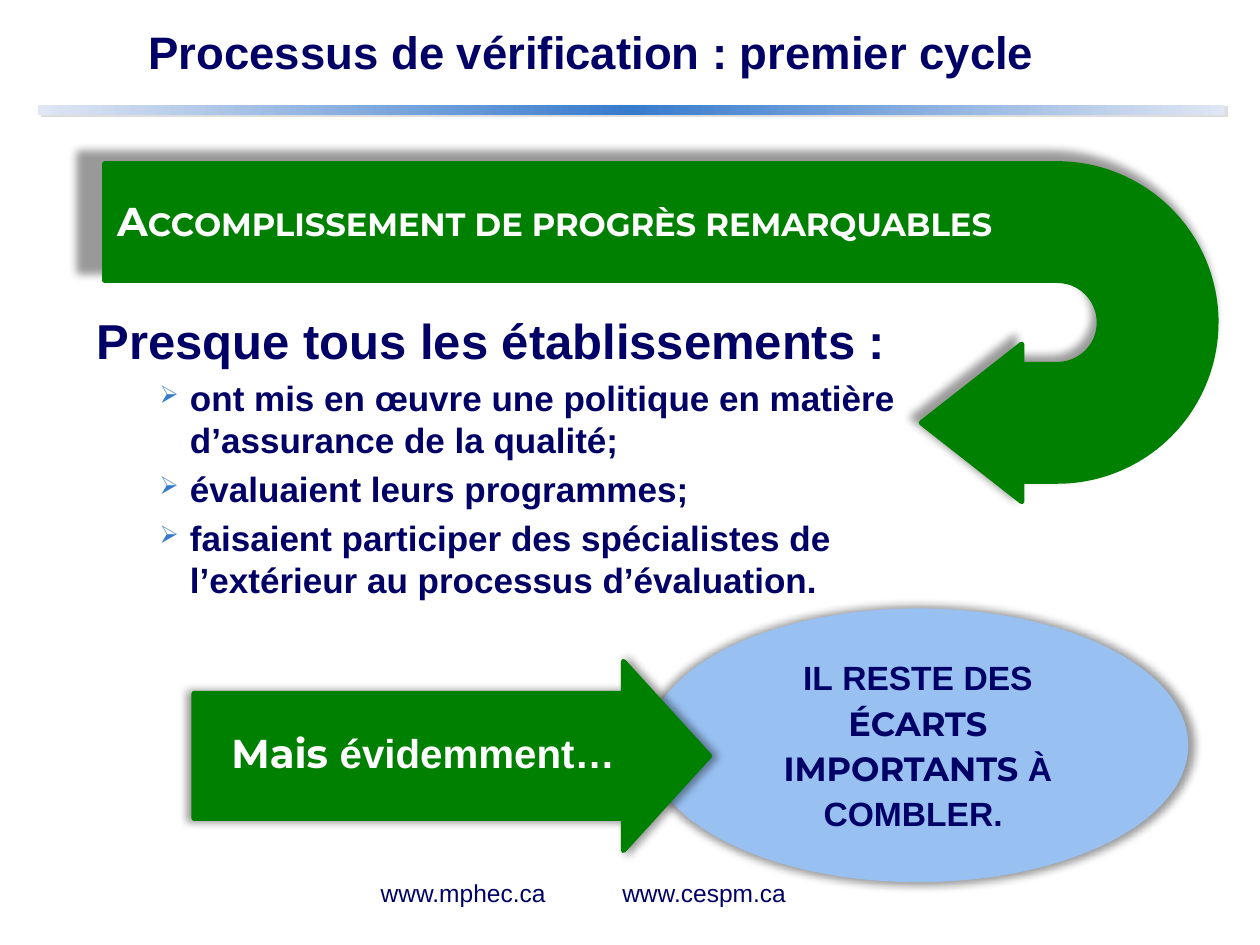
from lxml.etree import SubElement as Sub
from pptx import Presentation as Deck
from pptx.dml.color import RGBColor as Rgb
from pptx.enum.shapes import MSO_SHAPE as Kind
from pptx.enum.text import MSO_ANCHOR as Anchor, PP_ALIGN as Align
from pptx.oxml.ns import qn
from pptx.util import Pt

HUES = {
    "navy": "000066", "white": "FFFFFF", "green": "008000", "sky": "98C1F2",
    "blue": "377BCD", "pale": "E0E6F3", "gray": "DDDDDD", "black": "000000",
}


def hue(name):
    return Rgb.from_string(HUES[name])


def write(par, text, size=24, face="Arial", color="navy", bold=True, small=False):
    run = par.add_run()
    run.text = text
    font = run.font
    font.size, font.name, font.bold = Pt(size), face, bold
    font.color.rgb = hue(color)
    if small:
        run._r.get_or_add_rPr().set("cap", "small")


class Page:
    def __init__(self, slide):
        self.slide = slide
        self.edge = 3
        self.lead = 0.9

    def shape(self, kind, box, color, adjust=(), turn=0):
        item = self.slide.shapes.add_shape(kind, *map(Pt, box))
        for index, value in enumerate(adjust):
            item.adjustments[index] = value
        item.rotation = turn
        item.fill.solid()
        item.fill.fore_color.rgb = hue(color)
        item.line.color.rgb = hue(color)
        item.line.width = Pt(self.edge)
        Sub(item.line._get_or_add_ln(), qn("a:round"))
        self.shade(item, "black", 40, blurRad=Pt(5), sx=102000, sy=102000, algn="ctr")
        frame = item.text_frame
        frame.word_wrap = True
        frame.vertical_anchor = Anchor.MIDDLE
        return frame

    def shade(self, item, color, alpha, **spec):
        item.shadow.inherit = False
        effects = item._element.spPr.find(qn("a:effectLst"))
        spec = {key: str(value) for key, value in spec.items()}
        outer = Sub(effects, qn("a:outerShdw"), rotWithShape="0", **spec)
        tint = Sub(outer, qn("a:srgbClr"), val=HUES[color])
        Sub(tint, qn("a:alpha"), val=str(alpha * 1000))

    def rule(self, box):
        item = self.slide.shapes.add_shape(Kind.RECTANGLE, *map(Pt, box))
        item.line.fill.background()
        item.fill.gradient()
        item.fill.gradient_angle = 0
        stops = item._element.spPr.find(qn("a:gradFill")).find(qn("a:gsLst"))
        stops.clear()
        for place, name in ((0, "pale"), (50, "blue"), (100, "pale")):
            stop = Sub(stops, qn("a:gs"), pos=str(place * 1000))
            Sub(stop, qn("a:srgbClr"), val=HUES[name])
        self.shade(item, "gray", 100, dist=Pt(2.2), dir=27 * 60000)

    def text(self, box, text, align=Align.LEFT, anchor=Anchor.TOP, lead=None, **look):
        frame = self.slide.shapes.add_textbox(*map(Pt, box)).text_frame
        frame.word_wrap = True
        frame.vertical_anchor = anchor
        par = frame.paragraphs[0]
        par.alignment = align
        par.line_spacing = lead
        write(par, text, **look)
        return frame

    def bullet(self, frame, text, size):
        par = frame.add_paragraph()
        props = par._p.get_or_add_pPr()
        props.set("marL", str(Pt(53.3)))
        props.set("indent", str(Pt(-17.3)))
        Sub(Sub(props, qn("a:buClr")), qn("a:srgbClr"), val=HUES["blue"])
        Sub(props, qn("a:buSzPct"), val="70000")
        Sub(props, qn("a:buChar"), char="➢")
        par.space_before = Pt(size * 0.2)
        write(par, text, size=size)

    def label(self, frame, lines, **look):
        for index, line in enumerate(lines):
            par = frame.add_paragraph() if index else frame.paragraphs[0]
            par.alignment = Align.CENTER
            par.line_spacing = self.lead
            for text, face in line:
                write(par, text, face=face, **look)


def main():
    deck = Deck()
    deck.slide_width, deck.slide_height = Pt(720), Pt(540)
    page = Page(deck.slides.add_slide(deck.slide_layouts[6]))

    page.rule((21.6, 59.8, 678.2, 5.8))
    page.text((348.5, 498.2, 143.3, 24.5), "www.cespm.ca", size=14, bold=False)
    page.text((175.7, 498.2, 143.3, 24.5), "www.mphec.ca", Align.RIGHT,
              size=14, bold=False)
    page.text((77.8, 2.2, 621.4, 58.3), "Processus de vérification : premier cycle",
              anchor=Anchor.MIDDLE, lead=page.lead, size=26)

    body = page.text((48.2, 174.2, 475.9, 203.8),
                     "Presque tous les établissements :", size=28)
    for point in (
        "ont mis en œuvre une politique en matière d’assurance de la qualité;",
        "évaluaient leurs programmes;",
        "faisaient participer des spécialistes de l’extérieur au processus d’évaluation.",
    ):
        page.bullet(body, point, 20)

    page.shape(Kind.U_TURN_ARROW, (280.8, -127.4, 193, 635), "green",
               (0.345, 0.233, 0.297, 0.47, 0.265), 90)
    page.text((59.8, 108.7, 589.7, 36), "Accomplissement de progrès remarquables",
              size=23, face="Montserrat", color="white", small=True)

    gaps = page.shape(Kind.OVAL, (371.5, 349.2, 306, 153.4), "sky")
    page.label(gaps, (
        (("il reste des ", "Arial"), ("écarts", "Montserrat")),
        (("importants ", "Montserrat"), ("à combler. ", "Arial")),
    ), small=True)
    arrow = page.shape(Kind.RIGHT_ARROW, (110.9, 378, 294.5, 108), "green",
                       (0.66, 0.455))
    page.label(arrow, ((("Mais ", "Montserrat"), ("évidemment…", "Arial")),),
               size=23, color="white")

    deck.save("out.pptx")


if __name__ == "__main__":
    main()
